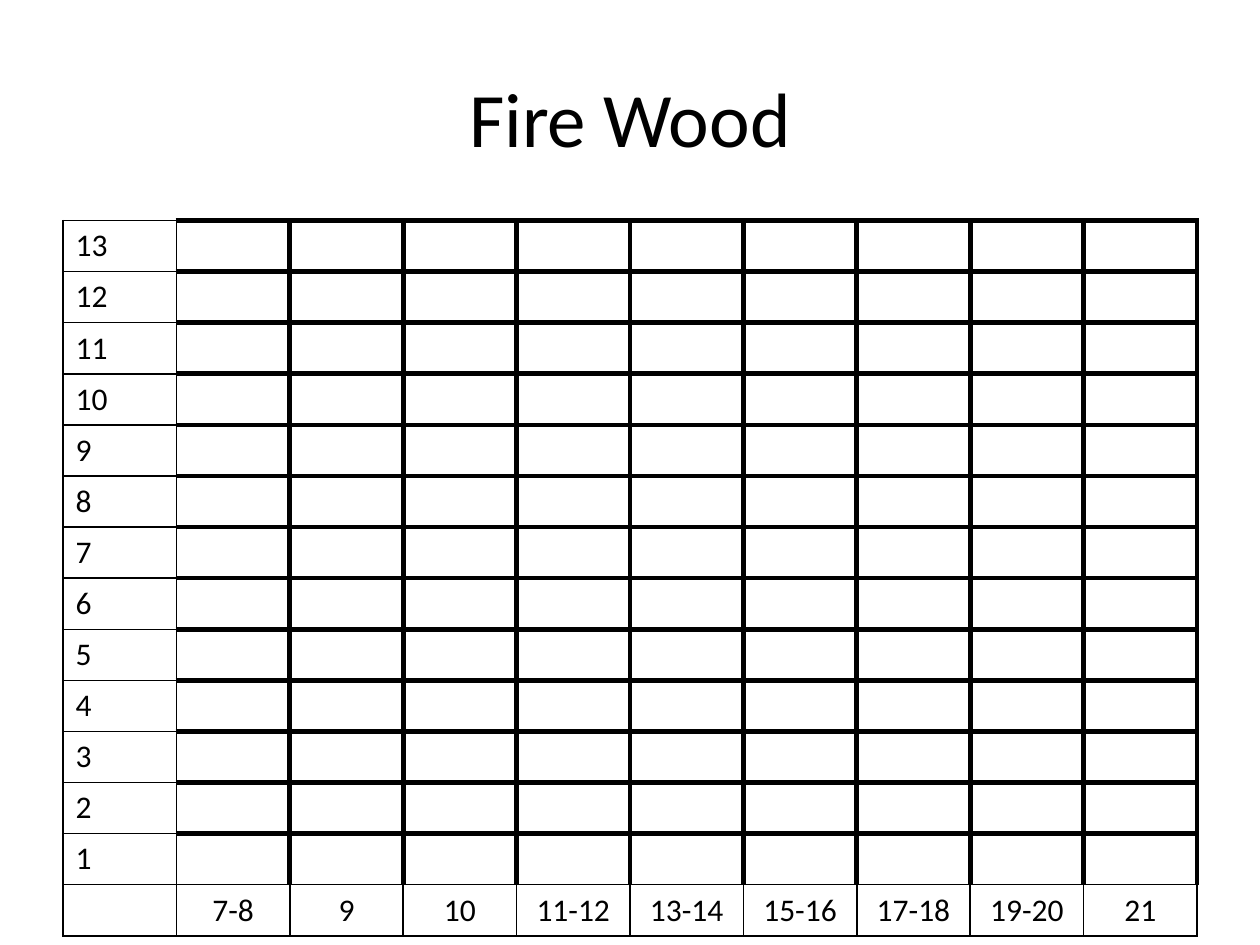
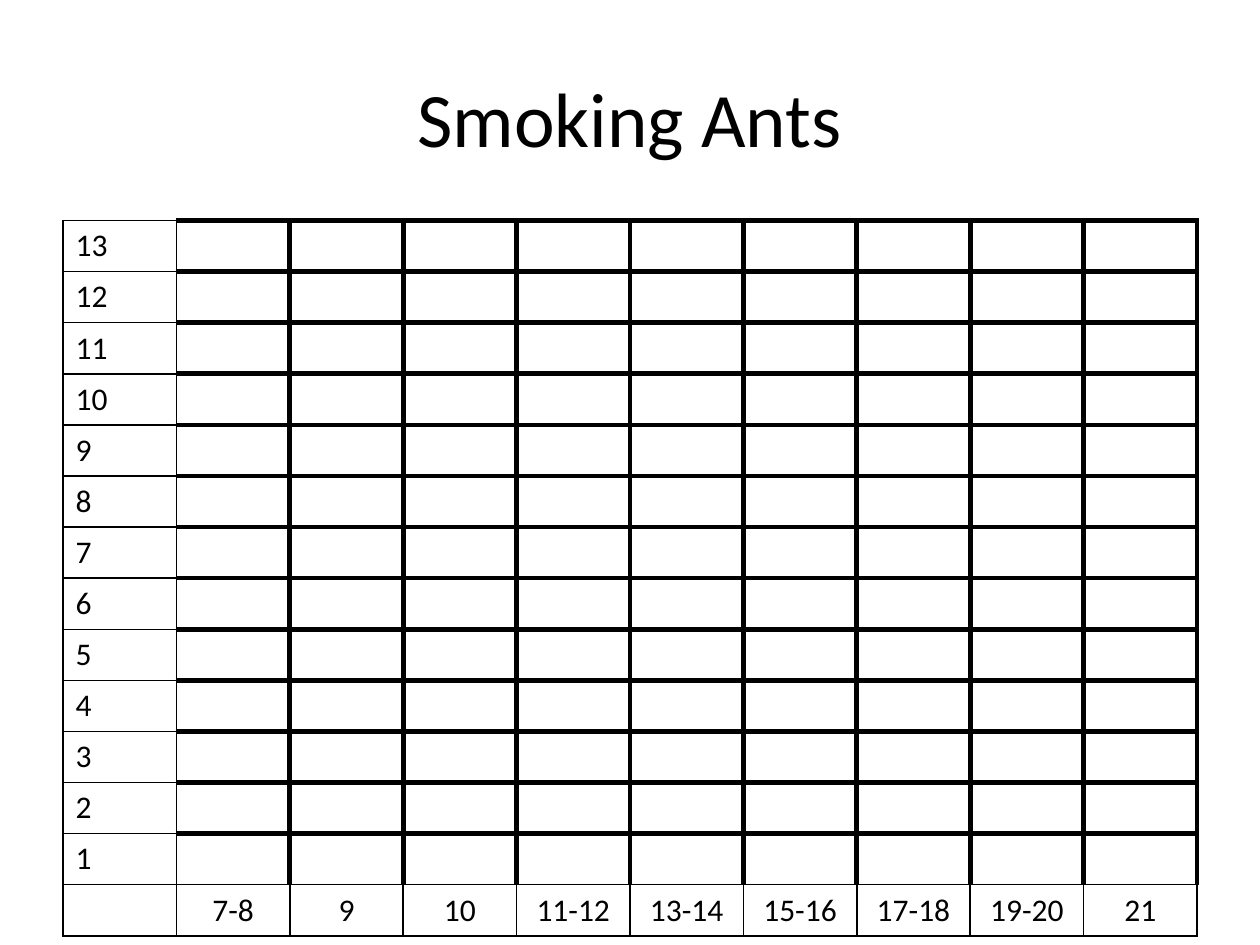
from lxml.etree import SubElement
from pptx import Presentation
from pptx.dml.color import RGBColor
from pptx.enum.text import MSO_ANCHOR, PP_ALIGN
from pptx.oxml.ns import qn
from pptx.util import Inches, Pt

TITLES = ["Fire Wood", "Smoking Ants"]
COUNTS = [str(count) for count in range(13, 0, -1)]
RANGES = ["7-8", "9", "10", "11-12", "13-14", "15-16", "17-18", "19-20", "21"]
GRID = [[count] + [""] * len(RANGES) for count in COUNTS] + [[""] + RANGES]

BLACK = RGBColor(0x00, 0x00, 0x00)
WHITE = RGBColor(0xFF, 0xFF, 0xFF)
TITLE_FONT = {"name": "Calibri", "size": Pt(44), "bold": False}
LABEL_FONT = {"name": "Calibri", "size": Pt(18), "bold": False}
THIN, THICK = Pt(1), Pt(3)

SLIDE_WIDTH, SLIDE_HEIGHT = Inches(10), Inches(7.5)
MARGIN = Inches(0.5)
CONTENT_WIDTH = SLIDE_WIDTH - 2 * MARGIN
TITLE_TOP, TITLE_HEIGHT = Inches(0.3), Inches(1.25)
TABLE_TOP, TABLE_HEIGHT = Inches(1.75), Inches(5.68)


def format_text(para, font_values, alignment):
    para.alignment = alignment
    for span in para.runs:
        for name, value in font_values.items():
            setattr(span.font, name, value)
        span.font.color.rgb = BLACK


def add_title(page, text):
    box = page.shapes.title
    place = {"left": MARGIN, "top": TITLE_TOP,
             "width": CONTENT_WIDTH, "height": TITLE_HEIGHT}
    for name, value in place.items():
        setattr(box, name, value)
    box.text_frame.text = text
    box.text_frame.vertical_anchor = MSO_ANCHOR.MIDDLE
    format_text(box.text_frame.paragraphs[0], TITLE_FONT, PP_ALIGN.CENTER)


def border_widths(row, column):
    last_row = len(GRID) - 1
    if column == 0 or row == last_row:
        return dict.fromkeys(("lnL", "lnR", "lnT", "lnB"), THIN)
    return {
        "lnL": THIN if column == 1 else THICK,
        "lnR": THICK,
        "lnT": THICK,
        "lnB": THIN if row == last_row - 1 else THICK,
    }


def draw_borders(cell, widths):
    properties = cell._tc.get_or_add_tcPr()
    for side, width in widths.items():
        line = SubElement(properties, qn(f"a:{side}"), w=str(width))
        fill = SubElement(line, qn("a:solidFill"))
        SubElement(fill, qn("a:srgbClr"), val=str(BLACK))


def add_graph_grid(page):
    table = page.shapes.add_table(
        len(GRID), len(GRID[0]), MARGIN, TABLE_TOP, CONTENT_WIDTH, TABLE_HEIGHT
    ).table
    table.first_row = False
    table.horz_banding = False
    for row, labels in enumerate(GRID):
        for column, label in enumerate(labels):
            cell = table.cell(row, column)
            draw_borders(cell, border_widths(row, column))
            cell.fill.background()
            if label:
                cell.text = label
                alignment = PP_ALIGN.CENTER if column else PP_ALIGN.LEFT
                format_text(cell.text_frame.paragraphs[0], LABEL_FONT, alignment)


def main():
    deck = Presentation()
    deck.slide_width, deck.slide_height = SLIDE_WIDTH, SLIDE_HEIGHT
    background = deck.slide_master.background.fill
    background.solid()
    background.fore_color.rgb = WHITE
    title_only = deck.slide_layouts.get_by_name("Title Only")
    for title in TITLES:
        page = deck.slides.add_slide(title_only)
        add_title(page, title)
        add_graph_grid(page)
    deck.save("out.pptx")


if __name__ == "__main__":
    main()
